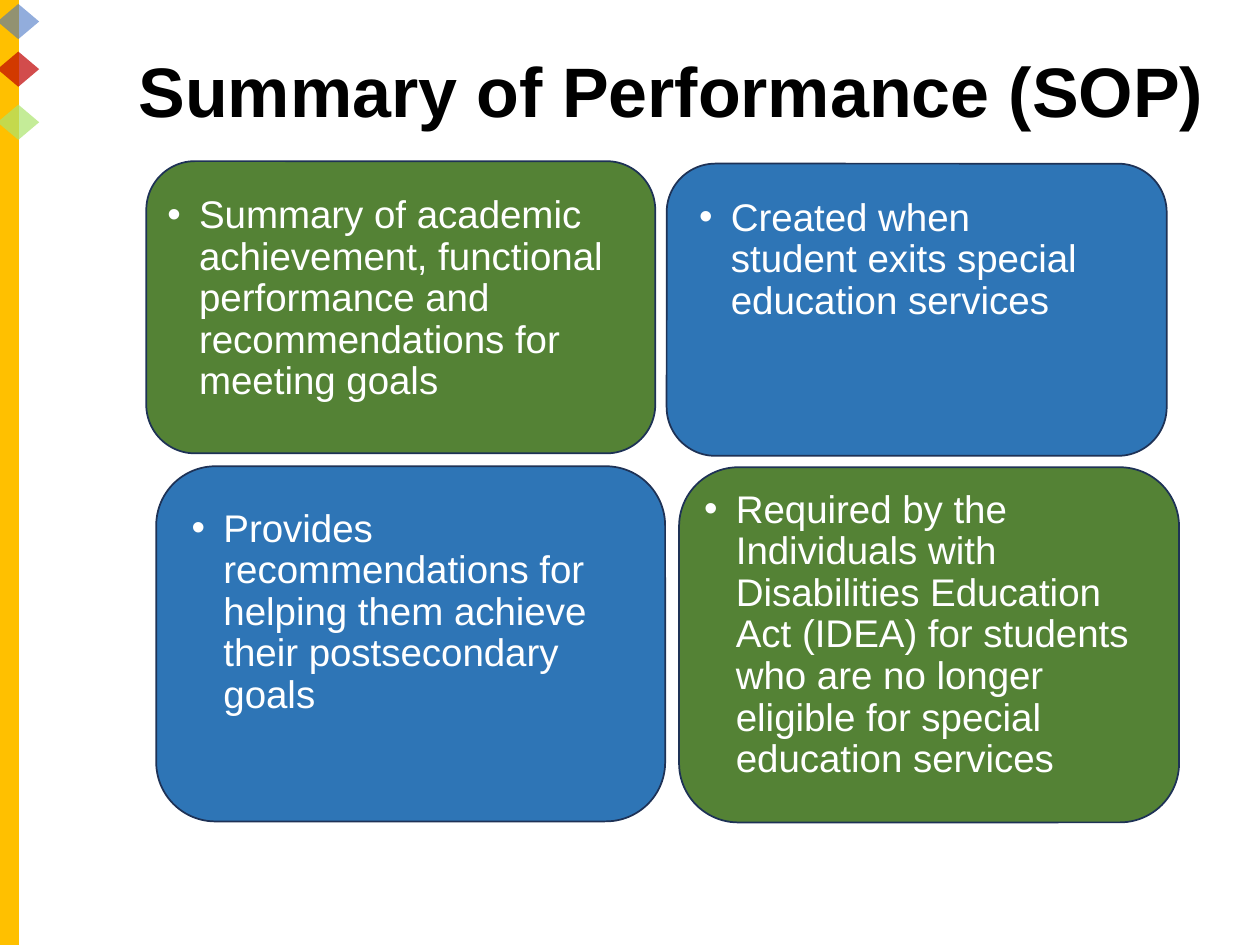
from lxml import etree
from pptx import Presentation
from pptx.dml.color import RGBColor
from pptx.enum.shapes import MSO_SHAPE
from pptx.enum.text import MSO_ANCHOR, MSO_AUTO_SIZE, PP_ALIGN
from pptx.oxml.ns import qn
from pptx.util import Cm, Pt

RECT = MSO_SHAPE.RECTANGLE
ROUND = MSO_SHAPE.ROUNDED_RECTANGLE
GEM = MSO_SHAPE.DIAMOND
TOP = MSO_ANCHOR.TOP
MIDDLE = MSO_ANCHOR.MIDDLE
LEFT = PP_ALIGN.LEFT
FIXED = MSO_AUTO_SIZE.NONE

COLORS = {
    "gold": "FFC000",
    "indigo": "4472C4",
    "red": "C00000",
    "lime": "ABE46D",
    "green": "548235",
    "blue": "2E75B6",
    "navy": "1E3256",
    "black": "000000",
    "white": "FFFFFF",
}

GEMS = [(0.08, "indigo", 58), (1.04, "red", 70), (2.11, "lime", 70)]

CARDS = [
    ("green", (2.95, 3.25, 10.26, 5.89), (3.12, 3.81, 9.88, 6.05),
     "Summary of academic achievement, functional performance and "
     "recommendations for meeting goals"),
    ("blue", (13.44, 3.3, 10.08, 5.89), (13.84, 3.86, 8.61, 5.28),
     "Created when student exits special education services"),
    ("blue", (3.15, 9.4, 10.26, 7.16), (3.61, 10.13, 9.17, 5.13),
     "Provides recommendations for helping them achieve their "
     "postsecondary goals"),
    ("green", (13.69, 9.42, 10.08, 7.16), (13.94, 9.75, 9.55, 6.81),
     "Required by the Individuals with Disabilities Education Act (IDEA) "
     "for students who are no longer eligible for special education services"),
]


def color(name):
    return RGBColor.from_string(COLORS[name])


def write(frame, text, font="Arial", size=22, ink="white", bold=False,
          anchor=TOP, before=0, bullet=None):
    frame.word_wrap = True
    frame.auto_size = FIXED
    frame.vertical_anchor = anchor
    para = frame.paragraphs[0]
    para.alignment = LEFT
    para.line_spacing = 0.9
    para.space_before = Pt(before)
    run = para.add_run()
    run.text = text
    run.font.name = font
    run.font.size = Pt(size)
    run.font.bold = bold
    run.font.color.rgb = color(ink)
    if bullet:
        props = para._p.get_or_add_pPr()
        props.set("marL", str(Cm(0.64)))
        props.set("indent", str(-Cm(0.64)))
        etree.SubElement(props, qn("a:buFont")).set("typeface", font)
        etree.SubElement(props, qn("a:buChar")).set("char", bullet)


class Deck:
    def __init__(self, slide):
        self.slide = slide
        self.holders = iter(slide.placeholders)

    def shape(self, kind, box, fill, line=None, alpha=None):
        item = self.slide.shapes.add_shape(kind, *map(Cm, box))
        item.shadow.inherit = False
        item.fill.solid()
        item.fill.fore_color.rgb = color(fill)
        if alpha:
            tint = item._element.spPr.find(".//" + qn("a:srgbClr"))
            etree.SubElement(tint, qn("a:alpha")).set("val", str(alpha * 1000))
        if line:
            item.line.color.rgb = color(line)
            item.line.width = Pt(1)
        else:
            item.line.fill.background()

    def text(self, box, words, **style):
        item = next(self.holders)
        item.left, item.top, item.width, item.height = map(Cm, box)
        self.slide.shapes._spTree.append(item._element)
        write(item.text_frame, words, **style)

    def title(self, box, words):
        self.text(box, words, size=40, ink="black", bold=True, anchor=MIDDLE)

    def point(self, box, words):
        self.text(box, words, before=10, bullet="•")


def main():
    show = Presentation()
    show.slide_width, show.slide_height = Cm(25.4), Cm(19.05)
    layout = show.slide_layouts.get_by_name("Comparison")
    deck = Deck(show.slides.add_slide(layout))

    deck.shape(RECT, (0, 0, 0.38, 19.05), "gold")
    for top, fill, alpha in GEMS:
        deck.shape(GEM, (-0.05, top, 0.84, 0.71), fill, alpha=alpha)

    deck.title((2.54, 1.02, 23.72, 1.78), "Summary of Performance (SOP)")
    for fill, card, area, words in CARDS:
        deck.shape(ROUND, card, fill, line="navy")
        deck.point(area, words)

    show.save("out.pptx")


if __name__ == "__main__":
    main()
